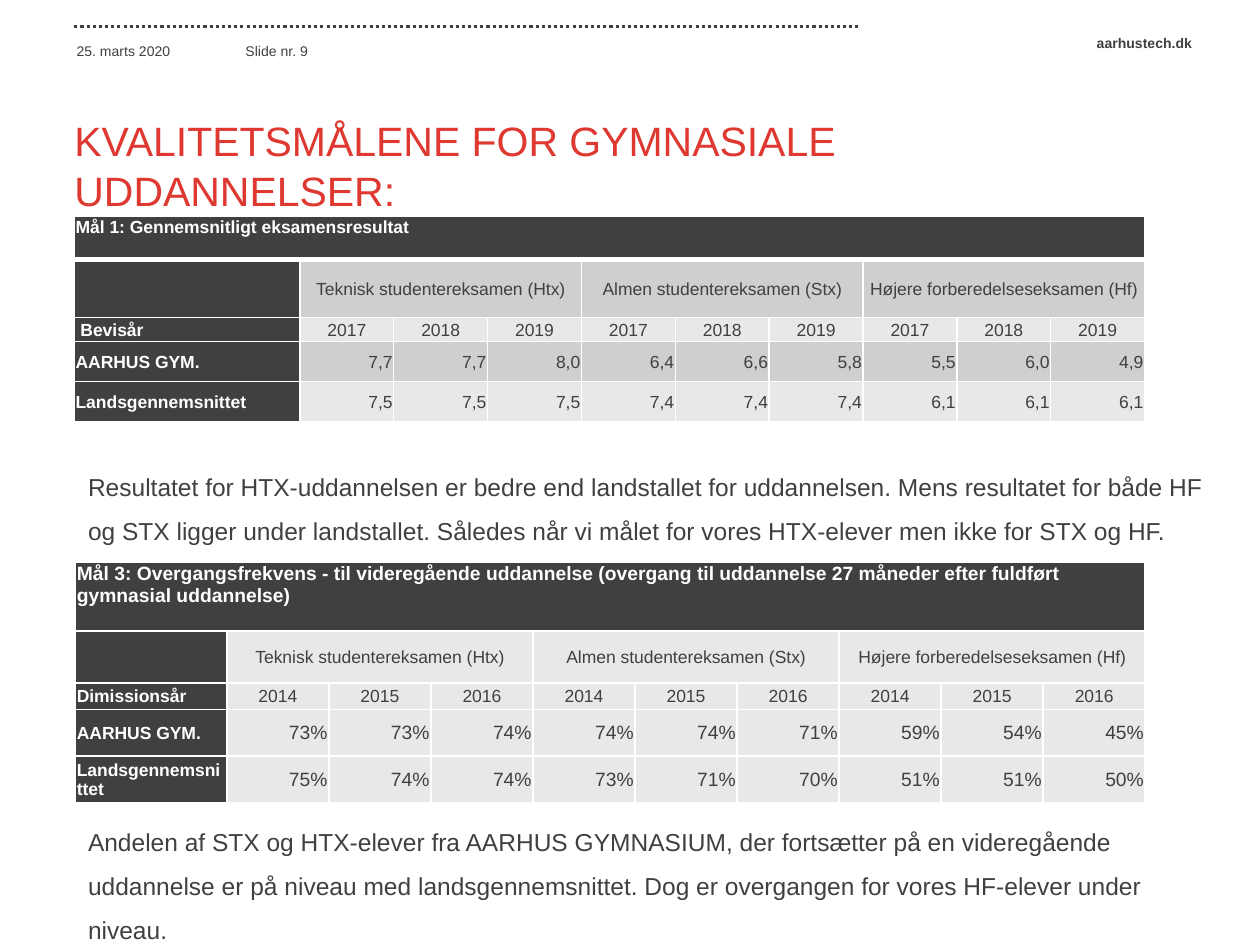
import pptx
import pptx.util
import pptx.dml.color
import pptx.enum.dml
import pptx.enum.shapes
import pptx.enum.text
import pptx.oxml
import pptx.oxml.ns

Inches, Pt = pptx.util.Inches, pptx.util.Pt
RGBColor = pptx.dml.color.RGBColor
ALIGN = pptx.enum.text.PP_ALIGN
ANCHOR = pptx.enum.text.MSO_ANCHOR

DARK = RGBColor(0x40, 0x40, 0x41)
RED = RGBColor(0xDE, 0x38, 0x31)
WHITE = RGBColor(0xFF, 0xFF, 0xFF)
MID = RGBColor(0xCF, 0xCF, 0xCF)
LIGHT = RGBColor(0xE8, 0xE8, 0xE9)

LEFT = 0.59
YEARS_PER_GROUP = 3
GROUPS = ["Teknisk studentereksamen (Htx)", "Almen studentereksamen (Stx)",
          "Højere forberedelseseksamen (Hf)"]


def set_all(obj, values):
    for name, value in values.items():
        setattr(obj, name, value)


def write(tf, text, frame=None, para=None, size=10, color=DARK, bold=False):
    """Fill a text frame with one formatted paragraph."""
    set_all(tf, frame or {})
    p = tf.paragraphs[0]
    set_all(p, para or {})
    r = p.add_run()
    r.text = text
    set_all(r.font, {"name": "Arial", "size": Pt(size), "bold": bold})
    r.font.color.rgb = color


def add_text(s, box, text, frame=None, para=None, **font):
    sp = s.shapes.add_textbox(*map(Inches, box))
    write(sp.text_frame, text, {"word_wrap": True, **(frame or {})}, para, **font)


def add_title(s, box, text):
    sp = s.shapes.title
    set_all(sp, dict(zip(("left", "top", "width", "height"), map(Inches, box))))
    frame = {f"margin_{side}": 0 for side in ("left", "top", "right", "bottom")}
    frame.update(vertical_anchor=ANCHOR.TOP, word_wrap=True,
                 auto_size=pptx.enum.text.MSO_AUTO_SIZE.NONE)
    write(sp.text_frame, text, frame, {"alignment": ALIGN.LEFT},
          size=23.4, color=RED)


def add_dotted_rule(s, x1, x2, y):
    line = s.shapes.add_connector(pptx.enum.shapes.MSO_CONNECTOR.STRAIGHT,
                                  *map(Inches, (x1, y, x2, y)))
    line.line.color.rgb = DARK
    set_all(line.line, {"width": Pt(1.75),
                        "dash_style": pptx.enum.dml.MSO_LINE.ROUND_DOT})
    line._element.spPr.append(pptx.oxml.parse_xml(
        f"<a:effectLst {pptx.oxml.ns.nsdecls('a')}/>"))


def style_cell(cell, fill, below=1, above=1):
    """White borders, thin margins and a solid fill."""
    tcPr = cell._tc.get_or_add_tcPr()
    for side, width in zip("LRTB", (1, 1, above, below)):
        tcPr.append(pptx.oxml.parse_xml(
            f'<a:ln{side} {pptx.oxml.ns.nsdecls("a")} w="{Pt(width)}">'
            f'<a:solidFill><a:srgbClr val="{WHITE}"/></a:solidFill></a:ln{side}>'))
    cell.fill.solid()
    cell.fill.fore_color.rgb = fill
    set_all(cell, {"margin_left": Inches(0.01), "margin_top": Inches(0.01),
                   "margin_right": Inches(0.01), "margin_bottom": 0})


def add_goal_table(s, left, top, widths, heights, heading, heading_size,
                   heading_rule, year_label, years, results, value_size, bands):
    """Heading row, exam groups, years, then one row of values per school."""
    n_cols = 1 + YEARS_PER_GROUP * len(GROUPS)
    label_w, value_w = widths
    sp = s.shapes.add_table(len(heights), n_cols, Inches(left), Inches(top),
                            Inches(label_w + value_w * (n_cols - 1)),
                            Inches(sum(heights)))
    table = sp.table
    for i, col in enumerate(table.columns):
        col.width = Inches(value_w if i else label_w)
    for row, height in zip(table.rows, heights):
        row.height = Inches(height)

    # Fills and borders
    for r in range(len(heights)):
        for c in range(n_cols):
            fill = bands[r - 1] if r and c else DARK
            style_cell(table.cell(r, c), fill,
                       below=heading_rule if r == 0 else 1,
                       above=heading_rule if r == 1 else 1)

    # Heading and exam groups
    table.cell(0, 0).merge(table.cell(0, n_cols - 1))
    write(table.cell(0, 0).text_frame, heading,
          size=heading_size, color=WHITE, bold=True)
    for i, group in enumerate(GROUPS):
        first = 1 + i * YEARS_PER_GROUP
        cell = table.cell(1, first)
        cell.merge(table.cell(1, first + YEARS_PER_GROUP - 1))
        cell.vertical_anchor = ANCHOR.MIDDLE
        write(cell.text_frame, group, para={"alignment": ALIGN.CENTER})

    # Years and values
    rows = [(year_label, years * len(GROUPS), ALIGN.CENTER, 10)]
    rows += [(name, values.split(), ALIGN.RIGHT, value_size)
             for name, values in results]
    for r, (label, values, align, size) in enumerate(rows, start=2):
        for c, text in enumerate([label] + values):
            cell = table.cell(r, c)
            cell.vertical_anchor = ANCHOR.MIDDLE
            if c:
                write(cell.text_frame, text, para={"alignment": align}, size=size)
            else:
                write(cell.text_frame, text, color=WHITE, bold=True)


def main():
    prs = pptx.Presentation()
    set_all(prs, {"slide_width": Inches(10), "slide_height": Inches(7.5)})
    s = prs.slides.add_slide(prs.slide_layouts[5])

    # Header strip
    add_dotted_rule(s, LEFT, 6.81, 0.21)
    add_text(s, (7.83, 0.22, 1.73, 0.24), "aarhustech.dk",
             {"vertical_anchor": ANCHOR.MIDDLE}, {"alignment": ALIGN.RIGHT},
             size=8, bold=True)
    for x, text in ((0.51, "25. marts 2020"), (1.85, "Slide nr. 9")):
        add_text(s, (x, 0.21, 1.26, 0.31), text,
                 {"vertical_anchor": ANCHOR.BOTTOM}, size=8)

    add_title(s, (LEFT, 0.92, 6.77, 0.87),
              "KVALITETSMÅLENE FOR GYMNASIALE UDDANNELSER:")

    # Exam results
    add_goal_table(
        s, LEFT, 1.72, (1.79, 0.745), (0.34, 0.46, 0.19, 0.32, 0.32),
        "Mål 1: Gennemsnitligt eksamensresultat", 10, 3,
        " Bevisår", ["2017", "2018", "2019"],
        [("AARHUS GYM.", "7,7 7,7 8,0 6,4 6,6 5,8 5,5 6,0 4,9"),
         ("Landsgennemsnittet", "7,5 7,5 7,5 7,4 7,4 7,4 6,1 6,1 6,1")],
        10, (MID, LIGHT, MID, LIGHT))

    # Transition to higher education
    add_goal_table(
        s, 0.6, 4.46, (1.2, 0.81), (0.55, 0.41, 0.21, 0.37, 0.37),
        "Mål 3: Overgangsfrekvens - til videregående uddannelse (overgang til "
        "uddannelse 27 måneder efter fuldført gymnasial uddannelse)", 11, 1,
        "Dimissionsår", ["2014", "2015", "2016"],
        [("AARHUS GYM.", "73% 73% 74% 74% 74% 71% 59% 54% 45%"),
         ("Landsgennemsnittet", "75% 74% 74% 73% 71% 70% 51% 51% 50%")],
        11, (LIGHT,) * 4)

    # Comments below each table
    comments = (
        (3.58, "Resultatet for HTX-uddannelsen er bedre end landstallet for "
               "uddannelsen. Mens resultatet for både HF og STX ligger under "
               "landstallet. Således når vi målet for vores HTX-elever men "
               "ikke for STX og HF."),
        (6.4, "Andelen af STX og HTX-elever fra AARHUS GYMNASIUM, der "
              "fortsætter på en videregående uddannelse er på niveau med "
              "landsgennemsnittet. Dog er overgangen for vores HF-elever "
              "under niveau."))
    for y, text in comments:
        add_text(s, (0.6, y, 9.21, 0.76), text,
                 para={"line_spacing": 1.5}, size=14)

    prs.save("out.pptx")


if __name__ == "__main__":
    main()
